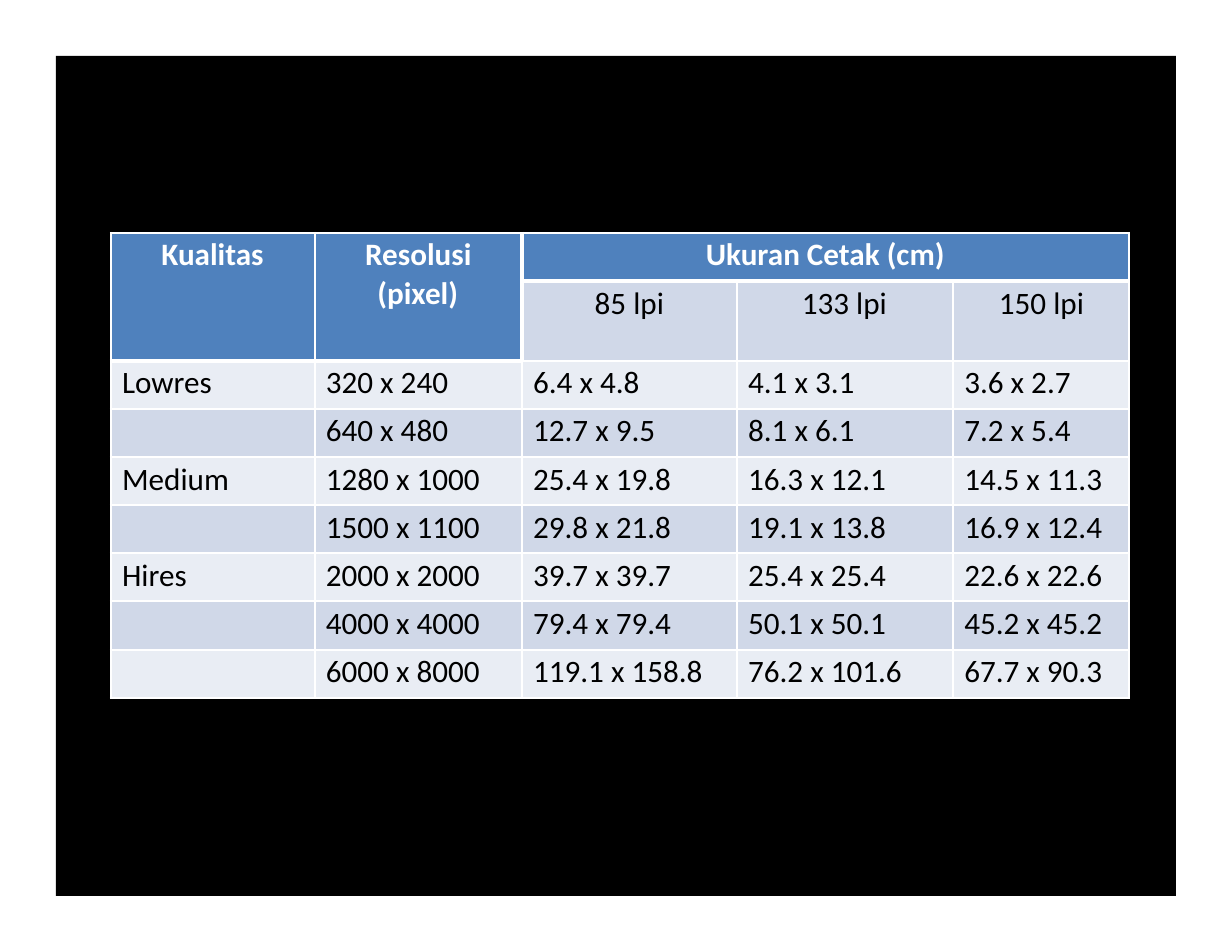
from lxml import etree
from pptx import Presentation
from pptx.dml.color import RGBColor
from pptx.enum.shapes import MSO_SHAPE
from pptx.enum.text import PP_ALIGN
from pptx.oxml.ns import qn
from pptx.util import Inches, Pt

RECTANGLE = MSO_SHAPE.RECTANGLE
LEFT = PP_ALIGN.LEFT
CENTER = PP_ALIGN.CENTER

COLUMN_WIDTHS = [1.82, 1.85, 1.92, 1.93, 1.57]
ROW_HEIGHT = 0.43
HEADER_ROWS = 2

TITLES = [
    (0, 0, "Kualitas", LEFT, 0.45, 0),
    (0, 1, "Resolusi (pixel)", LEFT, 0.56, -0.11),
    (0, 2, "Ukuran Cetak (cm)", CENTER, 0, 0),
]
SCREENS = [
    (1, 2, "85 lpi", CENTER, 0, 0),
    (1, 3, "133 lpi", LEFT, 0.58, 0),
    (1, 4, "150 lpi", LEFT, 0.41, 0),
]
SIZES = [
    ("Lowres", "320 x 240", "6.4 x 4.8", "4.1 x 3.1", "3.6 x 2.7"),
    ("", "640 x 480", "12.7 x 9.5", "8.1 x 6.1", "7.2 x 5.4"),
    ("Medium", "1280 x 1000", "25.4 x 19.8", "16.3 x 12.1", "14.5 x 11.3"),
    ("", "1500 x 1100", "29.8 x 21.8", "19.1 x 13.8", "16.9 x 12.4"),
    ("Hires", "2000 x 2000", "39.7 x 39.7", "25.4 x 25.4", "22.6 x 22.6"),
    ("", "4000 x 4000", "79.4 x 79.4", "50.1 x 50.1", "45.2 x 45.2"),
    ("", "6000 x 8000", "119.1 x 158.8", "76.2 x 101.6", "67.7 x 90.3"),
]


def color(value):
    return RGBColor.from_string(value)


def vertical_width(row, edge):
    if edge == 2 and row < HEADER_ROWS:
        return 3
    return 1 if edge == 4 and row > 0 else 1.5


def horizontal_width(edge, column):
    heavy_edge = 2 if column < 2 else 1
    return 3 if edge == heavy_edge else 1.5


class SlideBuilder:
    font = "Calibri"
    size = 20
    dark = "000000"
    light = "FFFFFF"
    header = "4F81BD"
    bands = ["E9EDF4", "D0D8E8"]

    def __init__(self, deck):
        self.slide = deck.slides.add_slide(deck.slide_layouts[6])

    def panel(self, left, top, width, height):
        shape = self.slide.shapes.add_shape(
            RECTANGLE, Inches(left), Inches(top), Inches(width), Inches(height))
        shape.shadow.inherit = False
        shape.fill.solid()
        shape.fill.fore_color.rgb = color(self.dark)
        shape.line.fill.background()

    def table(self, left, top, row_count):
        frame = self.slide.shapes.add_table(
            row_count, len(COLUMN_WIDTHS), Inches(left), Inches(top),
            Inches(sum(COLUMN_WIDTHS)), Inches(ROW_HEIGHT * row_count))
        table = frame.table
        table.first_row = False
        table.horz_banding = False
        for column, width in zip(table.columns, COLUMN_WIDTHS):
            column.width = Inches(width)
        for row in table.rows:
            row.height = Inches(ROW_HEIGHT)
        return table

    def border(self, cell, side, width):
        line = etree.SubElement(cell._tc.get_or_add_tcPr(), qn("a:ln" + side))
        line.set("w", str(Pt(width)))
        fill = etree.SubElement(line, qn("a:solidFill"))
        etree.SubElement(fill, qn("a:srgbClr")).set("val", self.light)

    def style_cell(self, table, row, column):
        cell = table.cell(row, column)
        cell.margin_left = cell.margin_right = cell.margin_bottom = 0
        cell.margin_top = Inches(0.03)
        self.border(cell, "L", vertical_width(row, column))
        self.border(cell, "R", vertical_width(row, column + 1))
        self.border(cell, "T", horizontal_width(row, column))
        self.border(cell, "B", horizontal_width(row + 1, column))
        is_title = row == 0 or (row < HEADER_ROWS and column < 2)
        cell.fill.solid()
        cell.fill.fore_color.rgb = color(self.header if is_title else self.bands[row % 2])

    def cell_text(self, cell, text, align=LEFT, indent=0.1, first=0, title=False):
        para = cell.text_frame.paragraphs[0]
        para.alignment = align
        properties = para._p.get_or_add_pPr()
        properties.set("marL", str(Inches(indent)))
        properties.set("indent", str(Inches(first)))
        para.font.size = Pt(self.size)
        if text:
            span = para.add_run()
            span.text = text
            span.font.name = self.font
            span.font.size = Pt(self.size)
            span.font.bold = title
            span.font.color.rgb = color(self.light if title else self.dark)


def main():
    deck = Presentation()
    deck.slide_width = Inches(11)
    deck.slide_height = Inches(8.5)
    page = SlideBuilder(deck)
    page.panel(0.5, 0.5, 10, 7.5)

    row_count = HEADER_ROWS + len(SIZES)
    table = page.table(0.99, 2.08, row_count)
    for row in range(row_count):
        for column in range(len(COLUMN_WIDTHS)):
            page.style_cell(table, row, column)
    for column in range(2):
        table.cell(0, column).merge(table.cell(1, column))
    table.cell(0, 2).merge(table.cell(0, 4))

    for row, column, text, align, indent, first in TITLES + SCREENS:
        page.cell_text(table.cell(row, column), text, align, indent, first, row == 0)
    for row, values in enumerate(SIZES, HEADER_ROWS):
        for column, text in enumerate(values):
            page.cell_text(table.cell(row, column), text)

    deck.save("out.pptx")


if __name__ == "__main__":
    main()
